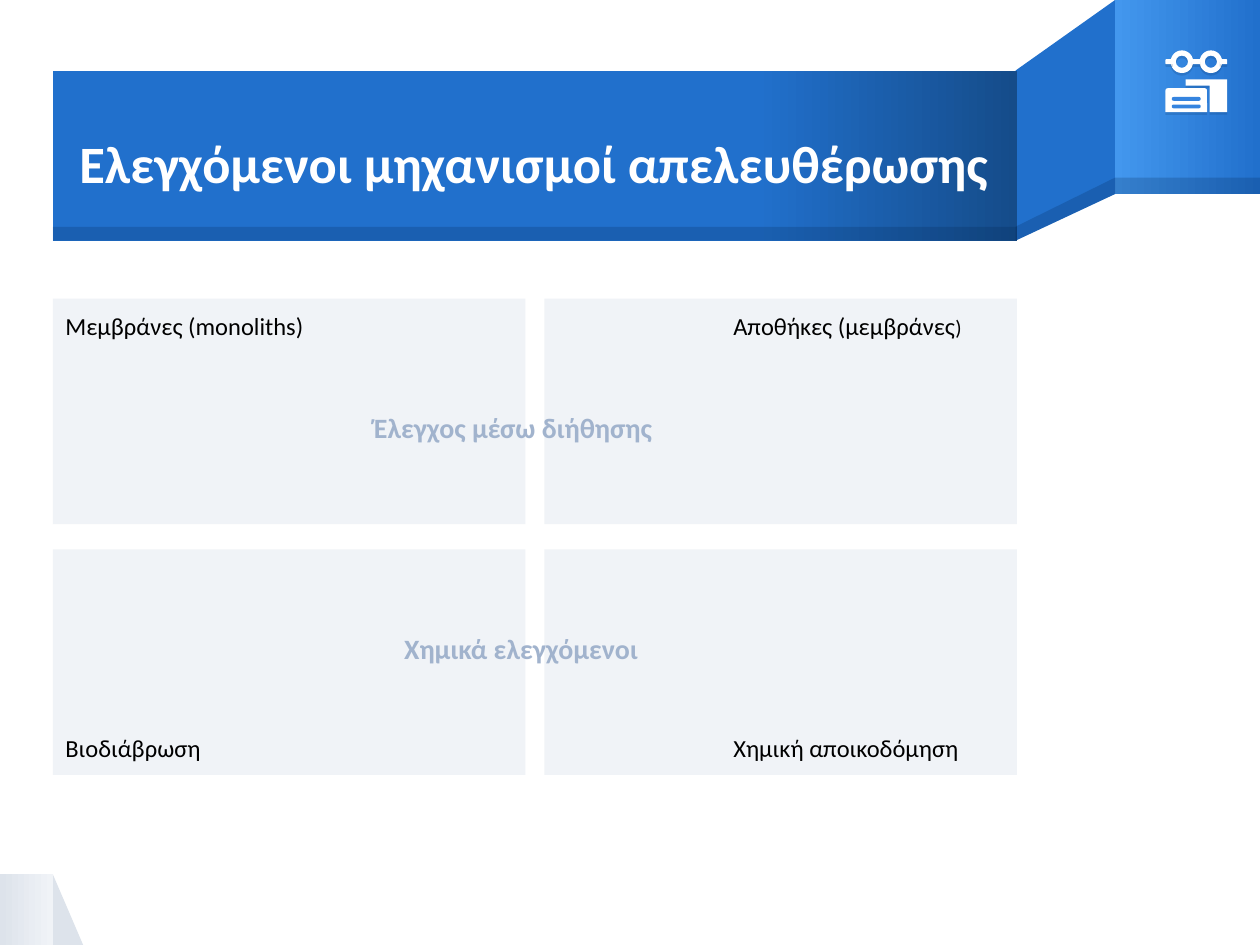
from lxml.etree import SubElement
from pptx import Presentation
from pptx.dml.color import RGBColor
from pptx.enum.shapes import MSO_SHAPE
from pptx.enum.text import MSO_ANCHOR, PP_ALIGN
from pptx.oxml.ns import qn
from pptx.util import Inches, Pt

BLUE, DARK, PALE, WHITE = "2170CC", "001F46", "F0F3F7", "FFFFFF"


def color(code):
    """Turn a hex string into a colour."""
    return RGBColor.from_string(code)


def fade(node, pct):
    """Give a colour element an opacity in percent."""
    SubElement(node, qn("a:alpha"), val=str(pct * 1000))


def paint(shape, fill, alpha=None):
    """Fill a shape flatly, without line or shadow."""
    shape.shadow.inherit = False
    shape.line.fill.background()
    shape.fill.solid()
    shape.fill.fore_color.rgb = color(fill)
    if alpha:
        fade(shape.element.spPr.find(qn("a:solidFill"))[0], alpha)
    return shape


def blend(shape, first, last, start=0):
    """Fill a shape with a gradient from left to right."""
    shape.fill.gradient()
    shape.fill.gradient_angle = 0
    for stop, code, place in zip(shape.fill.gradient_stops, (first, last), (start, 1)):
        stop.color.rgb = color(code)
        stop.position = place


def drop(shape):
    """Add a faint shadow straight below a shape."""
    effect = shape.element.spPr.find(qn("a:effectLst"))
    shade = SubElement(effect, qn("a:outerShdw"), dist=str(Pt(1.5)), dir="5400000")
    fade(SubElement(shade, qn("a:srgbClr"), val=DARK), 15)


def block(slide, box, fill, kind=MSO_SHAPE.RECTANGLE, alpha=None):
    """Add a painted preset shape."""
    return paint(slide.shapes.add_shape(kind, *map(Inches, box)), fill, alpha)


def outline(slide, points, fill, alpha=None):
    """Add a painted polygon."""
    spots = [(Inches(x), Inches(y)) for x, y in points]
    pen = slide.shapes.build_freeform(*spots[0])
    pen.add_line_segments(spots[1:])
    return paint(pen.convert_to_shape(), fill, alpha)


def setup(frame, left=0.1, top=0.1, right=0.1, low=0.1, anchor=MSO_ANCHOR.TOP):
    """Set wrapping, insets and anchor of a text frame."""
    frame.word_wrap = True
    frame.vertical_anchor = anchor
    frame.margin_left, frame.margin_right = Inches(left), Inches(right)
    frame.margin_top, frame.margin_bottom = Inches(top), Inches(low)


def write(frame, text, size=14, code="000000", bold=False, lead=1.0, before=0):
    """Append a formatted run to the first paragraph."""
    para = frame.paragraphs[0]
    para.alignment = PP_ALIGN.LEFT
    para.line_spacing, para.space_before = lead, Pt(before)
    run = para.add_run()
    run.text = text
    font = run.font
    font.name, font.size, font.bold = "Calibri", Pt(size), bold
    font.color.rgb = color(code)


def ribbon(slide):
    """Draw the folded banner and the corner fold."""
    block(slide, (0.42, 6.94, 0.24, 0.56), "DDE3EB", MSO_SHAPE.RIGHT_TRIANGLE)
    blend(block(slide, (0, 6.94, 0.42, 0.56), PALE), "DDE3EB", PALE)
    outline(slide, [(8.85, 0), (8.06, 0.56), (8.06, 1.91), (8.85, 1.54)], BLUE)
    blend(block(slide, (8.85, 0, 1.15, 1.54), BLUE), "4397EE", BLUE)
    blend(block(slide, (0.42, 0.56, 7.65, 1.35), BLUE), BLUE, "154C8A", 0.73)
    outline(slide, [(8.85, 1.41), (8.06, 1.8), (8.06, 1.91), (8.85, 1.54)], DARK, 20)
    for box in ((8.85, 1.41, 1.15, 0.13), (0.42, 1.8, 7.65, 0.11)):
        block(slide, box, DARK, alpha=20)


def heading(slide, text):
    """Place the title on top of the banner."""
    title = slide.shapes.title
    title.element.getparent().append(title.element)
    title.left, title.top = Inches(0.63), Inches(0.82)
    title.width, title.height = Inches(7.39), Inches(1.01)
    setup(title.text_frame, 0, 0, 0, 0, MSO_ANCHOR.MIDDLE)
    write(title.text_frame, text, size=30, code=WHITE, bold=True, lead=0.9)


def panel(slide, col, row, text, tail=""):
    """Add one cell of the two by two grid."""
    box = block(slide, (0.42 + col * 3.9, 2.37 + row * 1.99, 3.75, 1.79), PALE)
    frame = box.text_frame
    setup(frame, left=1.5 if col else 0.1, right=0.1 if col else 1.5,
          anchor=MSO_ANCHOR.BOTTOM if row else MSO_ANCHOR.TOP)
    write(frame, text, lead=1.5 if row else 1.0, before=2.8)
    if tail:
        write(frame, tail, size=12, before=2.8)


def label(slide, left, top, text):
    """Add a row label across two panels."""
    spot = slide.shapes.add_textbox(*map(Inches, (left, top, 5, 0.37)))
    setup(spot.text_frame, top=0.05, low=0.05)
    write(spot.text_frame, text, size=16, code="A1B3CD", bold=True)


def icon(slide):
    """Draw the glasses and cards in the corner."""
    for mid in (9.38, 9.61):
        lens = block(slide, (mid - 0.09, 0.4, 0.18, 0.18), WHITE, MSO_SHAPE.DONUT)
        lens.adjustments[0] = 0.23
        drop(lens)
    for left, wide in ((9.25, 0.06), (9.46, 0.07), (9.68, 0.06)):
        drop(block(slide, (left, 0.47, wide, 0.04), WHITE, MSO_SHAPE.ROUNDED_RECTANGLE))
    drop(outline(slide, [(9.41, 0.63), (9.74, 0.63), (9.74, 0.89),
                         (9.6, 0.89), (9.6, 0.68), (9.41, 0.68)], WHITE))
    card = block(slide, (9.25, 0.7, 0.33, 0.19), WHITE, MSO_SHAPE.ROUND_2_SAME_RECTANGLE)
    card.adjustments[0] = 0.1
    drop(card)
    for top in (0.77, 0.83):
        bar = block(slide, (9.3, top, 0.23, 0.03), "3584DF", MSO_SHAPE.ROUNDED_RECTANGLE)
        bar.adjustments[0] = 0.5


def main():
    """Build and save the slide."""
    deck = Presentation()
    deck.slide_width, deck.slide_height = Inches(10), Inches(7.5)
    slide = deck.slides.add_slide(deck.slide_layouts[5])
    ribbon(slide)
    heading(slide, "Ελεγχόμενοι μηχανισμοί απελευθέρωσης")
    panel(slide, 0, 0, "Μεμβράνες (monoliths)")
    panel(slide, 1, 0, "Αποθήκες (μεμβράνες", ")")
    panel(slide, 0, 1, "Βιοδιάβρωση")
    panel(slide, 1, 1, "Χημική αποικοδόμηση")
    label(slide, 2.87, 3.21, "Έλεγχος μέσω διήθησης")
    label(slide, 3.11, 4.96, "Χημικά ελεγχόμενοι")
    icon(slide)
    deck.save("out.pptx")


if __name__ == "__main__":
    main()
